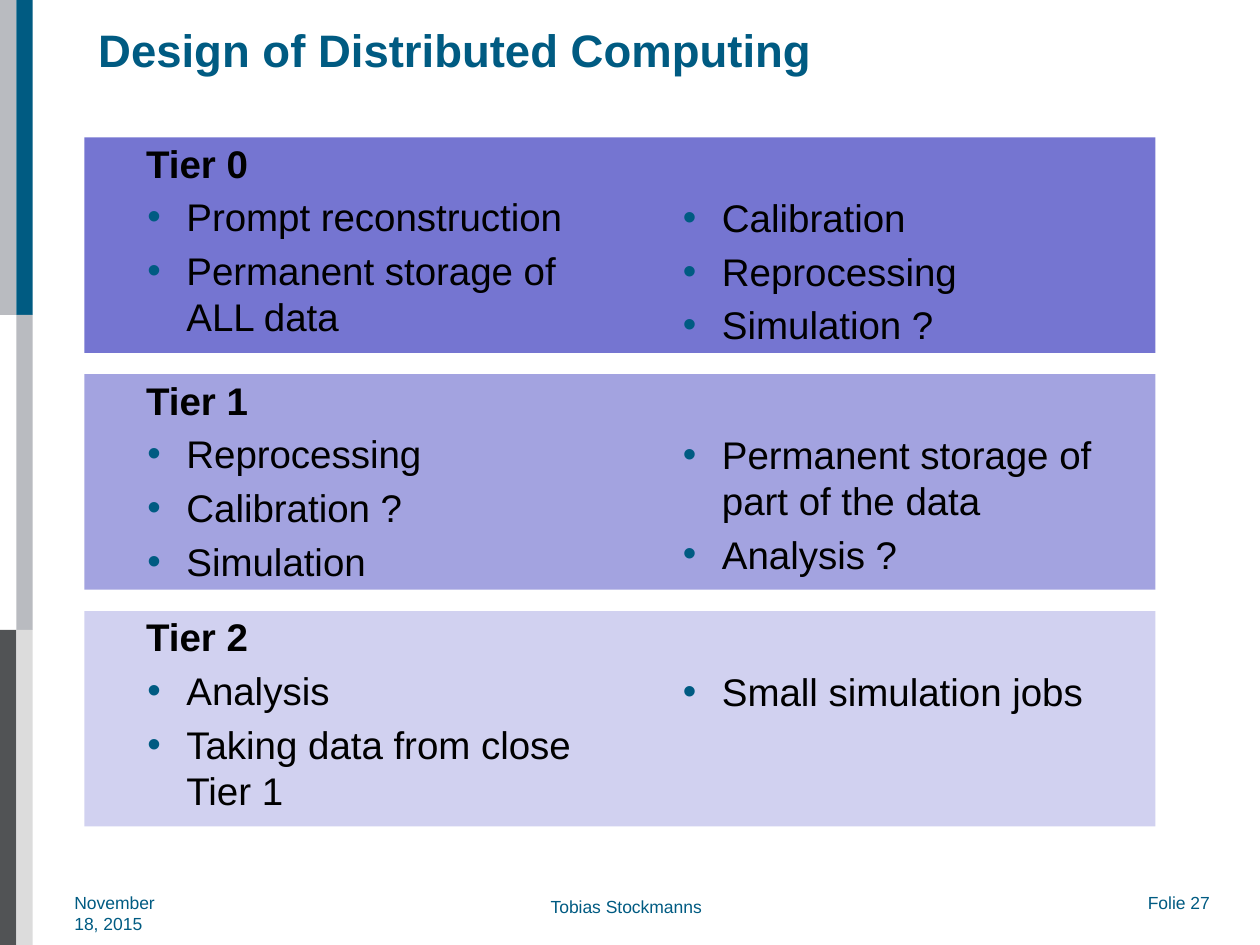
from lxml import etree
from pptx import Presentation
from pptx.dml.color import RGBColor
from pptx.enum.shapes import MSO_SHAPE
from pptx.enum.text import MSO_ANCHOR, PP_ALIGN
from pptx.oxml.ns import qn
from pptx.util import Inches, Pt

RECTANGLE = MSO_SHAPE.RECTANGLE
TOP, MIDDLE = MSO_ANCHOR.TOP, MSO_ANCHOR.MIDDLE
LEFT = PP_ALIGN.LEFT

TIERS = [
    ("Tier 0", "7575D1",
     ["Prompt reconstruction", "Permanent storage of ALL data"],
     ["Calibration", "Reprocessing", "Simulation ?"]),
    ("Tier 1", "A3A3E0",
     ["Reprocessing", "Calibration ?", "Simulation"],
     ["Permanent storage of part of the data", "Analysis ?"]),
    ("Tier 2", "D1D1F0",
     ["Analysis", "Taking data from close Tier 1"],
     ["Small simulation jobs"]),
]
BARS = [
    (0, 0, "B9BBC0"),
    (0, 2, "515355"),
    (1, 0, "005B82"),
    (1, 1, "B9BBC0"),
    (1, 2, "DCDCDC"),
]


def color(value):
    return RGBColor.from_string(value)


def write(para, text, size=22, ink="000000", bold=False):
    para.alignment = LEFT
    span = para.add_run()
    span.text = text
    span.font.name = "Arial"
    span.font.size = Pt(size)
    span.font.bold = bold
    span.font.color.rgb = color(ink)


class TierSlide:
    accent = "005B82"
    panel_left = 0.67
    panel_width = 8.5
    panel_height = 1.71
    heading_height = 0.43
    top_inset = 0.02
    bullet_indent = 0.81
    hanging = 0.31

    def __init__(self, deck):
        self.page = deck.slides.add_slide(deck.slide_layouts[6])

    def rectangle(self, left, top, width, height, fill):
        shape = self.page.shapes.add_shape(
            RECTANGLE, Inches(left), Inches(top), Inches(width), Inches(height))
        shape.shadow.inherit = False
        shape.fill.solid()
        shape.fill.fore_color.rgb = color(fill)
        shape.line.fill.background()
        return shape

    def frame(self, box, anchor=TOP, wrap=True, inset=0, right=0):
        frame = box.text_frame
        frame.word_wrap = wrap
        frame.vertical_anchor = anchor
        frame.margin_left = frame.margin_bottom = 0
        frame.margin_top = Inches(inset)
        frame.margin_right = Inches(right)
        return frame

    def text_box(self, left, top, width, height, **layout):
        box = self.page.shapes.add_textbox(
            Inches(left), Inches(top), Inches(width), Inches(height))
        return self.frame(box, **layout)

    def label(self, text, left, top, width, height, size=10, bold=False, **layout):
        frame = self.text_box(left, top, width, height, **layout)
        write(frame.paragraphs[0], text, size=size, ink=self.accent, bold=bold)

    def indent(self, para, margin, first):
        properties = para._p.get_or_add_pPr()
        properties.set("marL", str(Inches(margin)))
        properties.set("indent", str(Inches(first)))
        para.line_spacing = Pt(26.3)
        return properties

    def bullets(self, frame, items, follows_heading):
        for index, item in enumerate(items):
            first = index == 0 and not follows_heading
            para = frame.paragraphs[0] if first else frame.add_paragraph()
            properties = self.indent(para, self.bullet_indent, -self.hanging)
            if not first:
                para.space_before = Pt(4.4)
            tint = etree.SubElement(properties, qn("a:buClr"))
            etree.SubElement(tint, qn("a:srgbClr"), val=self.accent)
            etree.SubElement(properties, qn("a:buFont"), typeface="Arial")
            etree.SubElement(properties, qn("a:buChar"), char="•")
            write(para, item)

    def tier(self, top, heading, fill, left_items, right_items):
        column = self.panel_width / 2
        panel = self.rectangle(
            self.panel_left, top, self.panel_width, self.panel_height, fill)
        frame = self.frame(panel, inset=self.top_inset, right=column)
        self.indent(frame.paragraphs[0], 0, 0.49)
        write(frame.paragraphs[0], heading, bold=True)
        self.bullets(frame, left_items, follows_heading=True)
        second = self.text_box(
            self.panel_left + column, top + self.heading_height, column,
            self.panel_height - self.heading_height, inset=self.top_inset)
        self.bullets(second, right_items, follows_heading=False)


def main():
    deck = Presentation()
    deck.slide_width, deck.slide_height = Inches(10), Inches(7.5)
    slide = TierSlide(deck)
    for column, row, fill in BARS:
        slide.rectangle(0.13 * column, 2.5 * row, 0.13, 2.5, fill)
    slide.label("November 18, 2015", 0.59, 7.08, 0.85, 0.34)
    slide.label("Folie 27", 9.11, 7.08, 0.62, 0.17, wrap=False)
    slide.label("Tobias Stockmanns", 4.37, 7.11, 1.26, 0.17, wrap=False)
    slide.label("Design of Distributed Computing", 0.78, 0.08, 7.27, 0.62,
                size=26, bold=True, anchor=MIDDLE)
    for index, tier in enumerate(TIERS):
        slide.tier(1.09 + 1.88 * index, *tier)
    deck.save("out.pptx")


if __name__ == "__main__":
    main()
